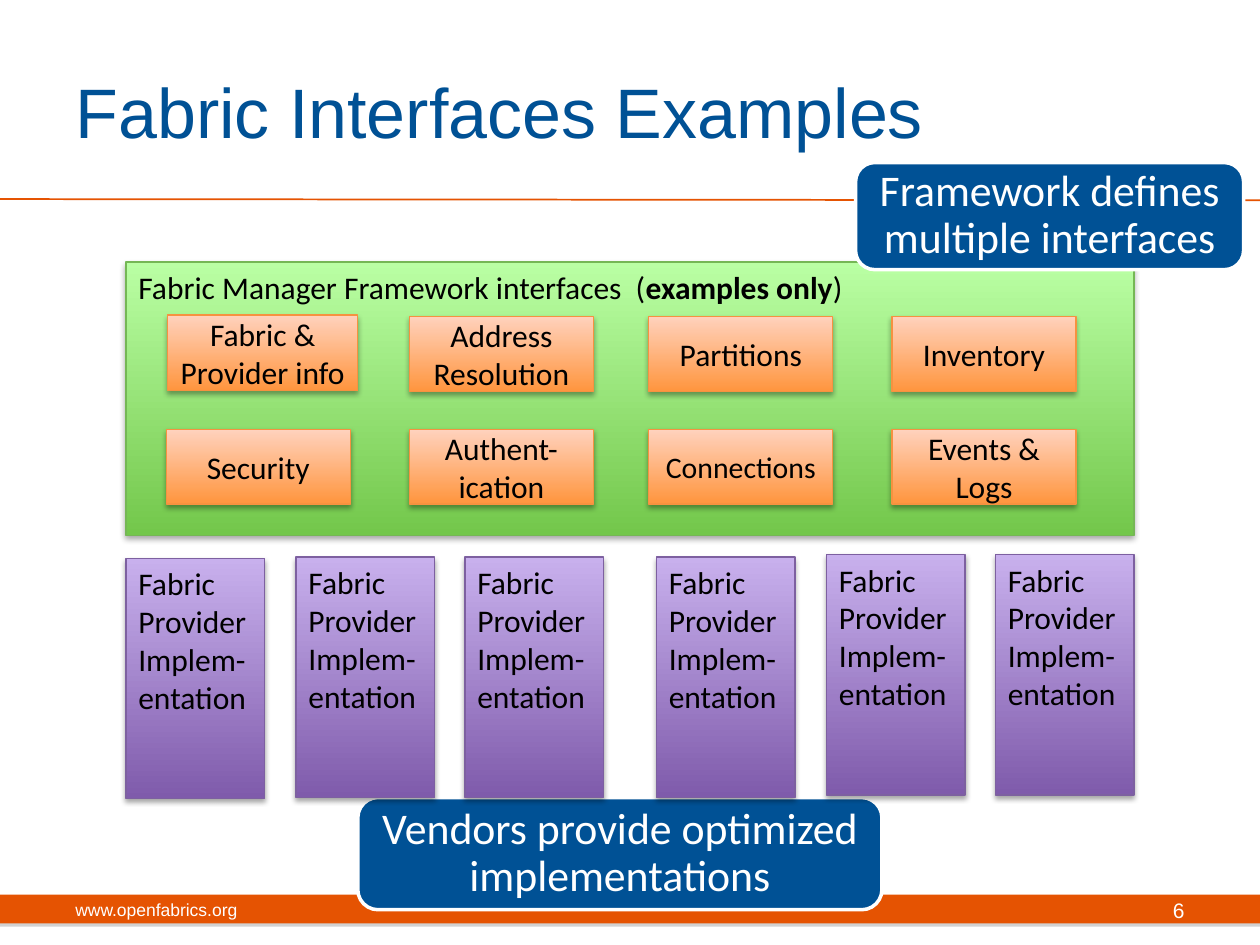
from typing import NamedTuple

from lxml.etree import SubElement
from pptx import Presentation
from pptx.dml.color import RGBColor
from pptx.enum.shapes import MSO_CONNECTOR, MSO_SHAPE
from pptx.enum.text import MSO_ANCHOR as Anchor, PP_ALIGN as Align
from pptx.oxml.ns import qn
from pptx.util import Inches, Pt

BLUE, ORANGE, WHITE, BLACK = "005195", "E55302", "FFFFFF", "000000"


class Style(NamedTuple):
    dark: str
    light: str
    outline: str


class Block(NamedTuple):
    text: str
    left: float
    top: float
    width: float
    height: float
    size: float = 18


GREEN = Style("73C74B", "BAFFA4", "75B755")
PEACH = Style("FF953E", "FFD2BD", "F69240")
PURPLE = Style("7F5BAB", "C8B0ED", "7D60A0")

TILE_WIDTH = 1.46
TILES = [
    Block("Address Resolution", 3.25, 2.51, TILE_WIDTH, 0.6),
    Block("Fabric & Provider info", 1.33, 2.5, 1.51, 0.6),
    Block("Partitions", 5.15, 2.51, TILE_WIDTH, 0.6),
    Block("Inventory", 7.08, 2.51, TILE_WIDTH, 0.6),
    Block("Authent-ication", 3.25, 3.41, TILE_WIDTH, 0.59),
    Block("Connections", 5.15, 3.41, TILE_WIDTH, 0.59, 17),
    Block("Events & Logs", 7.08, 3.41, TILE_WIDTH, 0.59),
    Block("Security", 1.32, 3.41, TILE_WIDTH, 0.59),
]
PROVIDERS = [
    Block("Fabric Provider Implem-entation", left, top, 1.1, 1.91)
    for left, top in [(1.0, 4.43), (2.35, 4.42), (3.69, 4.42),
                      (5.21, 4.42), (6.56, 4.4), (7.9, 4.4)]
]
CALLOUTS = [
    Block("Framework defines multiple interfaces", 6.79, 1.29, 3.08, 0.85, 25),
    Block("Vendors provide optimized implementations", 2.84, 6.33, 4.16, 0.89, 25),
]


def color(value: str) -> RGBColor:
    return RGBColor.from_string(value)


def bounds(block: Block) -> list:
    return [Inches(length) for length in block[1:5]]


def add_span(para, text: str, size: float, value: str, font="Calibri", bold=False) -> None:
    span = para.add_run()
    span.text = text
    span.font.size = Pt(size)
    span.font.name = font
    span.font.bold = bold
    span.font.color.rgb = color(value)


def add_shadow(shape, value: str, blur: float) -> None:
    """Give the shape a soft shadow that falls straight down."""
    shape.shadow.inherit = False
    effects = shape._element.spPr.find(qn("a:effectLst"))
    outer = SubElement(effects, qn("a:outerShdw"), blurRad=str(Pt(blur)),
                       dist=str(Pt(1.8)), dir="5400000", rotWithShape="0")
    tint = SubElement(outer, qn("a:srgbClr"), val=value)
    SubElement(tint, qn("a:alpha"), val="35000")


def add_block(page, block: Block, style: Style, anchor, align):
    """Draw a gradient box and return its paragraph."""
    box = page.shapes.add_shape(MSO_SHAPE.RECTANGLE, *bounds(block))
    box.fill.gradient()
    box.fill.gradient_angle = 90
    for stop, value in zip(box.fill.gradient_stops, (style.dark, style.light)):
        stop.color.rgb = color(value)
    box.line.color.rgb = color(style.outline)
    box.line.width = Pt(0.75)
    add_shadow(box, BLACK, 3.1)
    box.text_frame.vertical_anchor = anchor
    para = box.text_frame.paragraphs[0]
    para.alignment = align
    if block.text:
        add_span(para, block.text, block.size, BLACK)
    return para


def add_callout(page, block: Block) -> None:
    box = page.shapes.add_shape(MSO_SHAPE.ROUNDED_RECTANGLE, *bounds(block))
    box.adjustments[0] = 0.18
    box.shadow.inherit = False
    box.fill.solid()
    box.fill.fore_color.rgb = color(BLUE)
    box.line.color.rgb = color(WHITE)
    box.line.width = Pt(2)
    frame = box.text_frame
    frame.vertical_anchor = Anchor.MIDDLE
    frame.margin_left = frame.margin_right = Inches(0.08)
    frame.margin_top = frame.margin_bottom = Inches(0)
    para = frame.paragraphs[0]
    para.alignment = Align.CENTER
    para.line_spacing = 0.9
    add_span(para, block.text, block.size, WHITE)


def add_footer_text(page, block: Block, align) -> None:
    frame = page.shapes.add_textbox(*bounds(block)).text_frame
    frame.word_wrap = True
    frame.vertical_anchor = Anchor.MIDDLE
    para = frame.paragraphs[0]
    para.alignment = align
    add_span(para, block.text, block.size, WHITE, "Arial")


def add_frame(page) -> None:
    """Draw the footer band, the rule under the title and the title."""
    band = page.shapes.add_shape(MSO_SHAPE.RECTANGLE, Inches(0), Inches(7.1),
                                 Inches(10), Inches(0.23))
    band.fill.solid()
    band.fill.fore_color.rgb = color(ORANGE)
    band.line.fill.background()
    add_shadow(band, "808080", 0)

    rule = page.shapes.add_connector(MSO_CONNECTOR.STRAIGHT, Inches(0), Inches(1.58),
                                     Inches(10), Inches(1.59))
    rule.line.color.rgb = color(ORANGE)
    rule.line.width = Pt(1)
    SubElement(rule._element.spPr, qn("a:effectLst"))

    title = page.shapes.title
    title.left, title.top = Inches(0.5), Inches(0.25)
    title.width, title.height = Inches(8.17), Inches(1.25)
    title.text_frame.vertical_anchor = Anchor.MIDDLE
    para = title.text_frame.paragraphs[0]
    para.alignment = Align.LEFT
    add_span(para, "Fabric Interfaces Examples", 40, BLUE, "Arial")

    add_footer_text(page, Block("www.openfabrics.org", 0.5, 7.02, 3.17, 0.4, 10), Align.LEFT)
    add_footer_text(page, Block("6", 7.17, 7.02, 2.33, 0.4, 12), Align.RIGHT)


def main() -> None:
    deck = Presentation()
    deck.slide_width, deck.slide_height = Inches(10), Inches(7.5)
    page = deck.slides.add_slide(deck.slide_layouts[5])
    add_frame(page)

    heading = add_block(page, Block("", 1, 2.08, 8, 2.17), GREEN, Anchor.TOP, Align.LEFT)
    add_span(heading, "Fabric Manager Framework interfaces  (", 18, BLACK)
    add_span(heading, "examples only", 18, BLACK, bold=True)
    add_span(heading, ")", 18, BLACK)

    for tile in TILES:
        add_block(page, tile, PEACH, Anchor.MIDDLE, Align.CENTER)
    for callout in CALLOUTS:
        add_callout(page, callout)
    for provider in PROVIDERS:
        add_block(page, provider, PURPLE, Anchor.TOP, Align.LEFT)
    deck.save("out.pptx")


if __name__ == "__main__":
    main()
